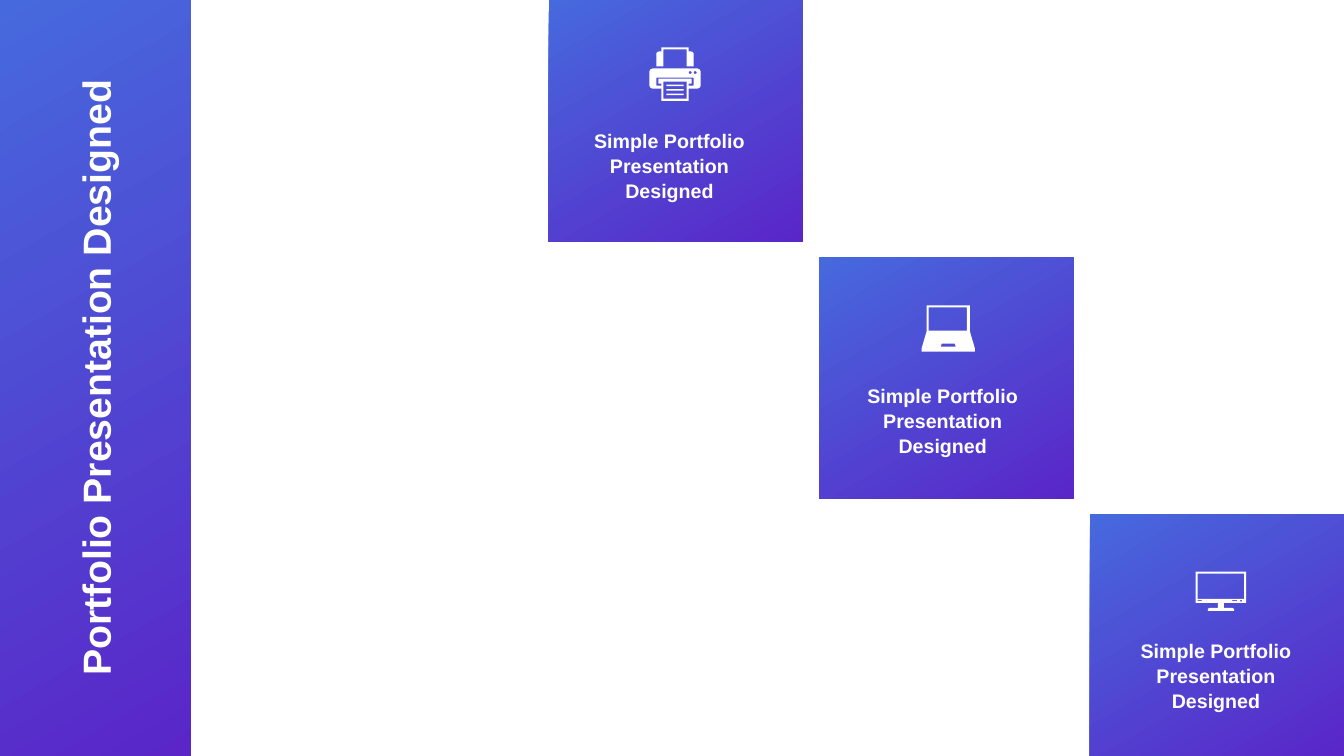
"""Build a portfolio slide with a vertical title and three diagonal icon tiles."""
import math

from pptx import Presentation
from pptx.dml.color import RGBColor
from pptx.enum import shapes, text
from pptx.util import Inches, Pt

BLUE = RGBColor(0x46, 0x69, 0xDD)
PURPLE = RGBColor(0x5A, 0x26, 0xC8)
WHITE = RGBColor(0xFF, 0xFF, 0xFF)
FONT = "Arial"
CAPTION = "Simple Portfolio Presentation Designed"


def box(left, top, right, bottom):
    """Return the corners of a rectangle."""
    return [(left, top), (right, top), (right, bottom), (left, bottom)]


def dot(x, y, radius):
    """Return a twelve-sided outline close to a circle."""
    angles = [math.tau * step / 12 for step in range(12)]
    return [(x + radius * math.cos(a), y + radius * math.sin(a)) for a in angles]


def mirrored(half, center):
    """Close a left-hand outline, listed top to bottom, with its reflection."""
    return half + [(2 * center - x, y) for x, y in reversed(half)]


def printer_outlines():
    """Return the contours of the printer icon."""
    center = 6.695
    paper_lines = [box(6.61, y, 6.78, y + 0.015) for y in (0.84, 0.885, 0.93)]
    slot = [(6.51, 0.77), (6.51, 0.85), (6.56, 0.85), (6.56, 0.83), (6.53, 0.83), (6.53, 0.78)]
    body = [(6.47, 0.68), (6.45, 0.69), (6.44, 0.71), (6.44, 0.85), (6.45, 0.87),
            (6.47, 0.88), (6.56, 0.88), (6.56, 1), ]
    feeder = [(6.58, 0.49), (6.58, 0.66), (6.51, 0.66), (6.51, 0.53), (6.52, 0.515),
              (6.54, 0.51), (6.56, 0.51), (6.56, 0.47)]
    return paper_lines + [
        box(6.58, 0.81, 6.81, 0.98),
        mirrored(slot, center),
        dot(6.845, 0.72, 0.015),
        dot(6.895, 0.72, 0.015),
        mirrored(body, center),
        mirrored(feeder, center),
    ]


def laptop_outlines():
    """Return the contours of the laptop icon."""
    center = 9.405
    return [
        mirrored([(9.34, 3.41), (9.33, 3.44)], center),
        box(9.21, 3.05, 9.59, 3.28),
        mirrored([(9.19, 3.03), (9.19, 3.29), (9.14, 3.46), (9.14, 3.49)], center),
    ]


def monitor_outlines():
    """Return the contours of the desktop monitor icon."""
    stand = [(11.86, 5.67), (11.86, 5.98), (12.08, 5.98), (12.08, 6.03), (12, 6.03),
             (11.98, 6.04), (11.98, 6.06)]
    return [
        box(11.88, 5.95, 11.92, 5.96),
        box(12.22, 5.95, 12.27, 5.96),
        dot(12.31, 5.96, 0.01),
        box(11.88, 5.69, 12.34, 5.94),
        mirrored(stand, 12.11),
    ]


def add_panel(slide, left, top, width, height):
    """Add a rectangle with the blue to purple gradient."""
    panel = slide.shapes.add_shape(
        shapes.MSO_SHAPE.RECTANGLE, Inches(left), Inches(top), Inches(width), Inches(height))
    panel.shadow.inherit = False
    panel.line.fill.background()
    panel.fill.gradient()
    panel.fill.gradient_angle = 300
    for stop, color in zip(panel.fill.gradient_stops, (BLUE, PURPLE)):
        stop.color.rgb = color


def add_icon(slide, outlines):
    """Add one white freeform made of several closed contours."""
    contours = [[(Inches(x), Inches(y)) for x, y in outline] for outline in outlines]
    builder = slide.shapes.build_freeform(*contours[0][0], scale=1.0)
    for index, points in enumerate(contours):
        if index:
            builder.move_to(*points[0])
        builder.add_line_segments(points[1:], close=True)
    icon = builder.convert_to_shape()
    icon.shadow.inherit = False
    icon.line.fill.background()
    icon.fill.solid()
    icon.fill.fore_color.rgb = WHITE


def format_text(frame, wording, size):
    """Write centred bold white text into a frame."""
    frame.word_wrap = True
    frame.text = wording
    paragraph = frame.paragraphs[0]
    paragraph.alignment = text.PP_ALIGN.CENTER
    font = paragraph.font
    font.name, font.size, font.bold = FONT, Pt(size), True
    font.color.rgb = WHITE
    return paragraph


def add_caption(slide, left, top):
    """Add the caption of a tile."""
    caption = slide.shapes.add_textbox(Inches(left), Inches(top), Inches(1.76), Inches(0.81))
    frame = caption.text_frame
    frame.margin_left = 0
    format_text(frame, CAPTION, 14).line_spacing = 1.05


def place_title(slide):
    """Turn the title placeholder upright and bring it in front of the panel."""
    title = slide.shapes.title
    title.left, title.top = Inches(-2.62), Inches(3.5)
    title.width, title.height = Inches(7.13), Inches(0.5)
    title.rotation = 270
    frame = title.text_frame
    frame.auto_size = text.MSO_AUTO_SIZE.NONE
    frame.vertical_anchor = text.MSO_ANCHOR.MIDDLE
    format_text(frame, "Portfolio Presentation Designed", 28)
    slide.shapes.element.append(title.element)


def main():
    """Build and save the slide."""
    presentation = Presentation()
    presentation.slide_width, presentation.slide_height = Inches(13.33), Inches(7.5)
    slide = presentation.slides.add_slide(presentation.slide_layouts[5])
    add_panel(slide, 0, 0, 1.89, 7.5)
    place_title(slide)
    icons = (printer_outlines(), laptop_outlines(), monitor_outlines())
    for index, outlines in enumerate(icons):
        add_panel(slide, 5.44 + 2.685 * index, 2.55 * index, 2.52, 2.4)
        add_caption(slide, 5.81 + 2.71 * index, 1.22 + 2.53 * index)
        add_icon(slide, outlines)
    presentation.save("out.pptx")


if __name__ == "__main__":
    main()
